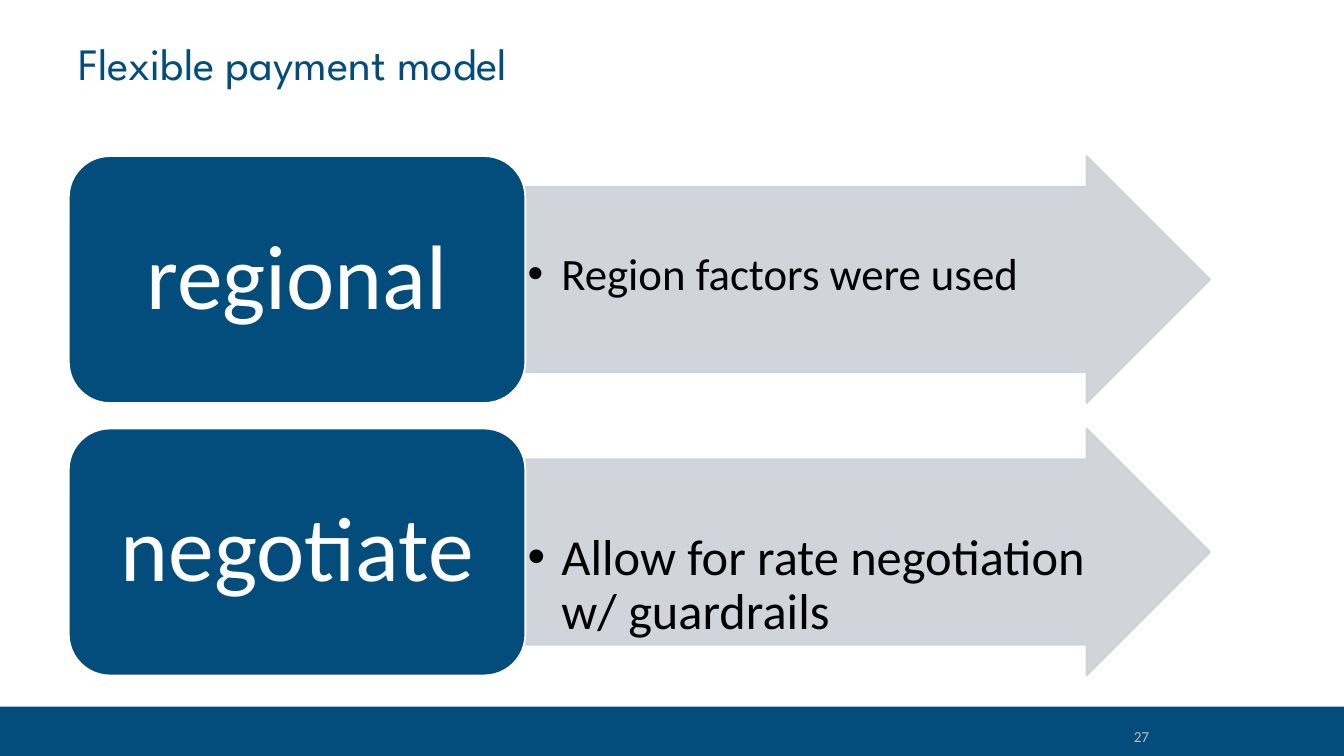
import pptx
import pptx.util
import pptx.dml.color
import pptx.enum.shapes
import pptx.enum.text
import pptx.oxml.ns
import lxml.etree

Cm = pptx.util.Cm
Pt = pptx.util.Pt
Align = pptx.enum.text.PP_ALIGN
Anchor = pptx.enum.text.MSO_ANCHOR
Preset = pptx.enum.shapes.MSO_SHAPE
qn = pptx.oxml.ns.qn

NAVY = pptx.dml.color.RGBColor(0x02, 0x4D, 0x7C)
SILVER = pptx.dml.color.RGBColor(0xCC, 0xD0, 0xD7)
GRAY = pptx.dml.color.RGBColor(0xBE, 0xBB, 0xBA)
WHITE = pptx.dml.color.RGBColor(0xFF, 0xFF, 0xFF)
BLACK = pptx.dml.color.RGBColor(0, 0, 0)


def write(shape, text, size, color, font="Calibri", align=Align.LEFT,
          anchor=Anchor.TOP, insets=(0.25, 0.13), spacing=1.0, bullet=False):
    frame = shape.text_frame
    frame.word_wrap = True
    frame.auto_size = pptx.enum.text.MSO_AUTO_SIZE.NONE
    frame.vertical_anchor = anchor
    frame.margin_left = frame.margin_right = Cm(insets[0])
    frame.margin_top = frame.margin_bottom = Cm(insets[1])
    paragraph = frame.paragraphs[0]
    paragraph.text = text
    paragraph.alignment = align
    paragraph.line_spacing = spacing
    paragraph.space_before = Pt(0)
    if bullet:
        properties = paragraph._p.get_or_add_pPr()
        properties.set("marL", str(Cm(0.64)))
        properties.set("indent", str(-Cm(0.64)))
        lxml.etree.SubElement(properties, qn("a:buChar")).set("char", "•")
    paragraph.font.name = font
    paragraph.font.size = Pt(size)
    paragraph.font.color.rgb = color


def add_block(preset, left, top, width, height, fill, line=None):
    block = slide.shapes.add_shape(preset, Cm(left), Cm(top), Cm(width), Cm(height))
    block.shadow.inherit = False
    block.fill.solid()
    block.fill.fore_color.rgb = fill
    if line is None:
        block.line.fill.background()
    else:
        block.line.color.rgb = line
        block.line.width = Pt(1)
    return block


deck = pptx.Presentation()
deck.slide_width = Cm(25.4)
deck.slide_height = Cm(14.29)
slide = deck.slides.add_slide(deck.slide_layouts.get_by_name("Two Content"))

add_block(Preset.RECTANGLE, 0, 13.36, 25.4, 0.93, NAVY)
page_number = slide.shapes.add_textbox(Cm(17.68), Cm(13.61), Cm(4.29), Cm(0.76))
write(page_number, "27", 8.2, GRAY, align=Align.RIGHT)

heading = slide.shapes.title
heading.left, heading.top, heading.width, heading.height = Cm(1.3), Cm(0.58), Cm(21.56), Cm(1.75)
write(heading, "Flexible payment model", 24, NAVY, font="League Spartan", insets=(0.18, 0.1))

principles = [
    ("regional", "Region factors were used", 24, 1.75),
    ("negotiate", "Allow for rate negotiation w/ guardrails", 27, 1.9),
]
FIRST_ROW, ROW_STEP = 2.95, 5.15

for row, (principle, detail, detail_size, detail_drop) in enumerate(principles):
    top = FIRST_ROW + row * ROW_STEP

    arrow = add_block(Preset.RIGHT_ARROW, 9.92, top, 12.95, 4.67, SILVER, line=SILVER)
    arrow.adjustments[0] = 0.75
    arrow.adjustments[1] = 0.5
    for tint in arrow._element.spPr.iter(qn("a:srgbClr")):
        lxml.etree.SubElement(tint, qn("a:alpha")).set("val", "90000")

    explanation = slide.placeholders[row + 1]
    explanation.left, explanation.top = Cm(9.92), Cm(top + detail_drop)
    explanation.width, explanation.height = Cm(11.18), Cm(2.3)
    write(explanation, detail, detail_size, BLACK, insets=(0.05, 0.05), spacing=0.9, bullet=True)
    slide.shapes._spTree.append(explanation._element)

    label = add_block(Preset.ROUNDED_RECTANGLE, 1.3, top, 8.63, 4.67, NAVY, line=WHITE)
    write(label, principle, 49, WHITE, align=Align.CENTER, anchor=Anchor.MIDDLE, spacing=0.9)

deck.save("out.pptx")
